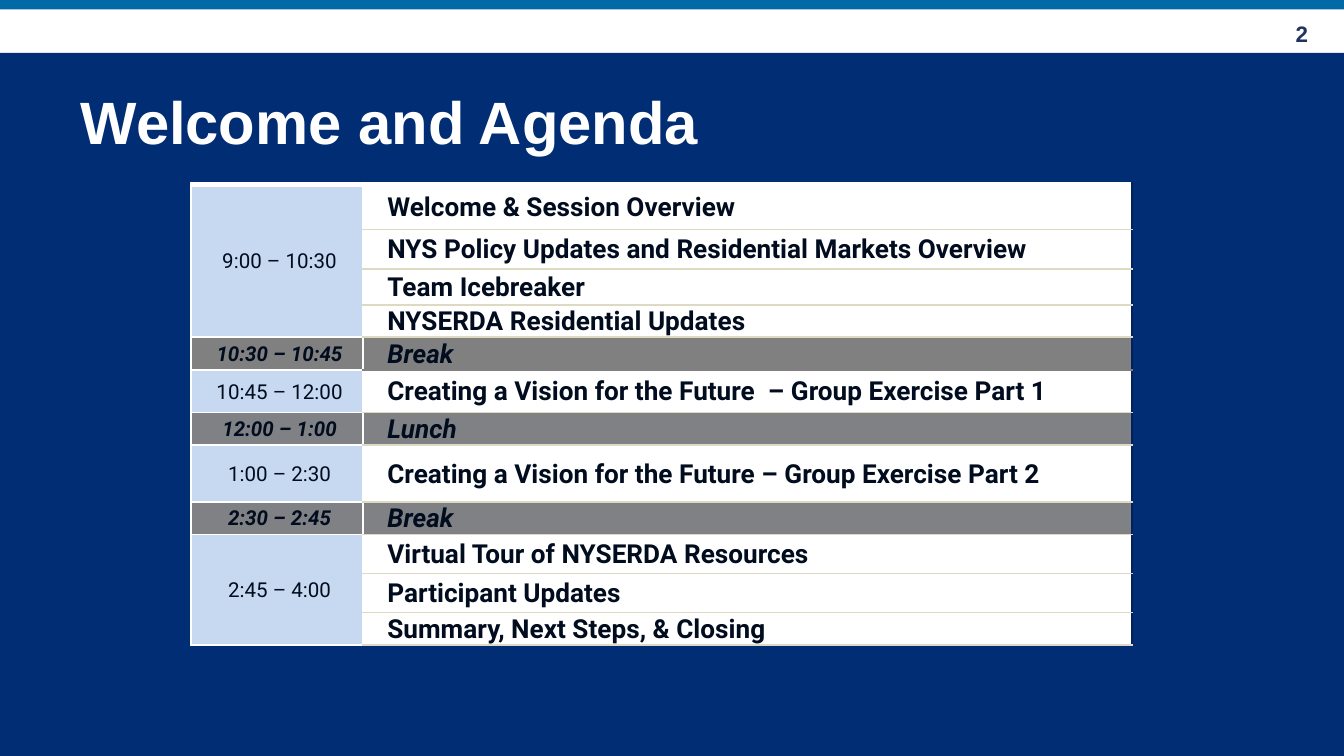
from dataclasses import dataclass

from lxml.etree import SubElement
from pptx import Presentation
from pptx.dml.color import RGBColor as Rgb
from pptx.enum.shapes import MSO_SHAPE as Shape
from pptx.enum.text import MSO_ANCHOR as Anchor, MSO_AUTO_SIZE as Auto, PP_ALIGN as Align
from pptx.oxml.ns import qn
from pptx.util import Cm, Pt


@dataclass(frozen=True)
class Theme:
    navy: str = "002D73"
    blue: str = "0069A6"
    white: str = "FFFFFF"
    ink: str = "010C1E"
    page: str = "1F3261"
    pale: str = "C6D9F1"
    gray: str = "808080"
    slate: str = "808184"
    sand: str = "DDD9C3"
    edge: str = "002060"
    sans: str = "Arial"
    body: str = "Roboto"
    head: int = 32
    item: int = 14
    time: int = 11
    num: int = 12


T = Theme()

# Each block: time, fill of the pause (None for a session), items with row heights in cm
BLOCKS = [
    ("9:00 – 10:30", None, [
        ("Welcome & Session Overview", 0.86),
        ("NYS Policy Updates and Residential Markets Overview", 0.74),
        ("Team Icebreaker", 0.68),
        ("NYSERDA Residential Updates", 0.61)]),
    ("10:30 – 10:45", T.gray, [("Break", 0.61)]),
    ("10:45 – 12:00", None, [
        ("Creating a Vision for the Future  – Group Exercise Part 1", 0.81)]),
    ("12:00 – 1:00", T.slate, [("Lunch", 0.61)]),
    ("1:00 – 2:30", None, [
        ("Creating a Vision for the Future – Group Exercise Part 2", 1.07)]),
    ("2:30 – 2:45", T.slate, [("Break", 0.61)]),
    ("2:45 – 4:00", None, [
        ("Virtual Tour of NYSERDA Resources", 0.74),
        ("Participant Updates", 0.74),
        ("Summary, Next Steps, & Closing", 0.61)]),
]


def add_run(frame, text, size, color, face, bold=True, slant=False, align=Align.LEFT):
    para = frame.paragraphs[0]
    para.alignment = align
    run = para.add_run()
    run.text = text
    font = run.font
    font.size, font.name = Pt(size), face
    font.bold, font.italic = bold, slant
    font.color.rgb = Rgb.from_string(color)
    return para


def add_band(slide, top, height, color):
    """Add a plain bar across the whole slide."""
    band = slide.shapes.add_shape(Shape.RECTANGLE, 0, Cm(top), Cm(25.4), Cm(height))
    band.shadow.inherit = False
    band.fill.solid()
    band.fill.fore_color.rgb = Rgb.from_string(color)
    band.line.fill.background()


def add_num(slide, text):
    box = slide.shapes.add_textbox(Cm(23.06), Cm(0.25), Cm(1.91), Cm(0.76))
    frame = box.text_frame
    frame.word_wrap = True
    frame.vertical_anchor = Anchor.MIDDLE
    add_run(frame, text, T.num, T.page, T.sans, align=Align.RIGHT)


def set_title(slide, text):
    title = slide.shapes.title
    title.left, title.top, title.width, title.height = Cm(1.27), Cm(1.09), Cm(22.86), Cm(2.39)
    frame = title.text_frame
    frame.auto_size = Auto.NONE
    frame.vertical_anchor = Anchor.MIDDLE
    add_run(frame, text, T.head, T.white, T.sans)
    # Bring the title in front of the bands
    title.element.getparent().append(title.element)


def style_cell(cell, fill, left, right, top, bottom, thick=1):
    """Set insets, borders and fill; borders must precede the fill in the XML."""
    cell.margin_left, cell.margin_right = Cm(0.13), Cm(0.03)
    cell.margin_top, cell.margin_bottom = Cm(0.03), 0
    cell.vertical_anchor = Anchor.MIDDLE
    props = cell._tc.get_or_add_tcPr()
    sides = [("L", left, 1), ("R", right, 1), ("T", top, thick), ("B", bottom, 1)]
    for side, color, width in sides:
        line = SubElement(props, qn(f"a:ln{side}"), w=str(Pt(width)))
        paint = SubElement(line, qn("a:solidFill"))
        SubElement(paint, qn("a:srgbClr"), val=color)
    cell.fill.solid()
    cell.fill.fore_color.rgb = Rgb.from_string(fill)


def add_agenda(slide):
    rows = [(time, pause, item, high, len(items) if i == 0 else 0)
            for time, pause, items in BLOCKS
            for i, (item, high) in enumerate(items)]
    total = sum(row[3] for row in rows)
    table = slide.shapes.add_table(
        len(rows), 2, Cm(3.61), Cm(3.48), Cm(17.78), Cm(total)).table
    table.first_row = table.horz_banding = False
    table.columns[0].width, table.columns[1].width = Cm(3.25), Cm(14.53)

    above = T.white
    for i, (time, pause, item, high, span) in enumerate(rows):
        table.rows[i].height = Cm(high)
        slot, topic = table.cell(i, 0), table.cell(i, 1)
        thick = 3 if i == 0 else 1
        below = T.gray if pause == T.gray else T.sand
        slant = pause is not None
        style_cell(slot, pause or T.pale, T.white, T.white, T.white, T.white, thick)
        style_cell(topic, pause or T.white, T.white, T.edge, above, below, thick)
        above = below
        if span:
            add_run(slot.text_frame, time, T.time, T.ink, T.body, slant, slant, Align.CENTER)
        if span > 1:
            slot.merge(table.cell(i + span - 1, 0))
        para = add_run(topic.text_frame, item, T.item, T.ink, T.body, slant=slant)
        para._p.get_or_add_pPr().set("marL", str(Cm(0.33)))


def main():
    deck = Presentation()
    deck.slide_width, deck.slide_height = Cm(25.4), Cm(14.29)
    slide = deck.slides.add_slide(deck.slide_layouts[5])
    add_band(slide, 1, 13.29, T.navy)
    add_num(slide, "2")
    add_band(slide, -0.05, 0.23, T.blue)
    set_title(slide, "Welcome and Agenda")
    add_agenda(slide)
    deck.save("out.pptx")


if __name__ == "__main__":
    main()
